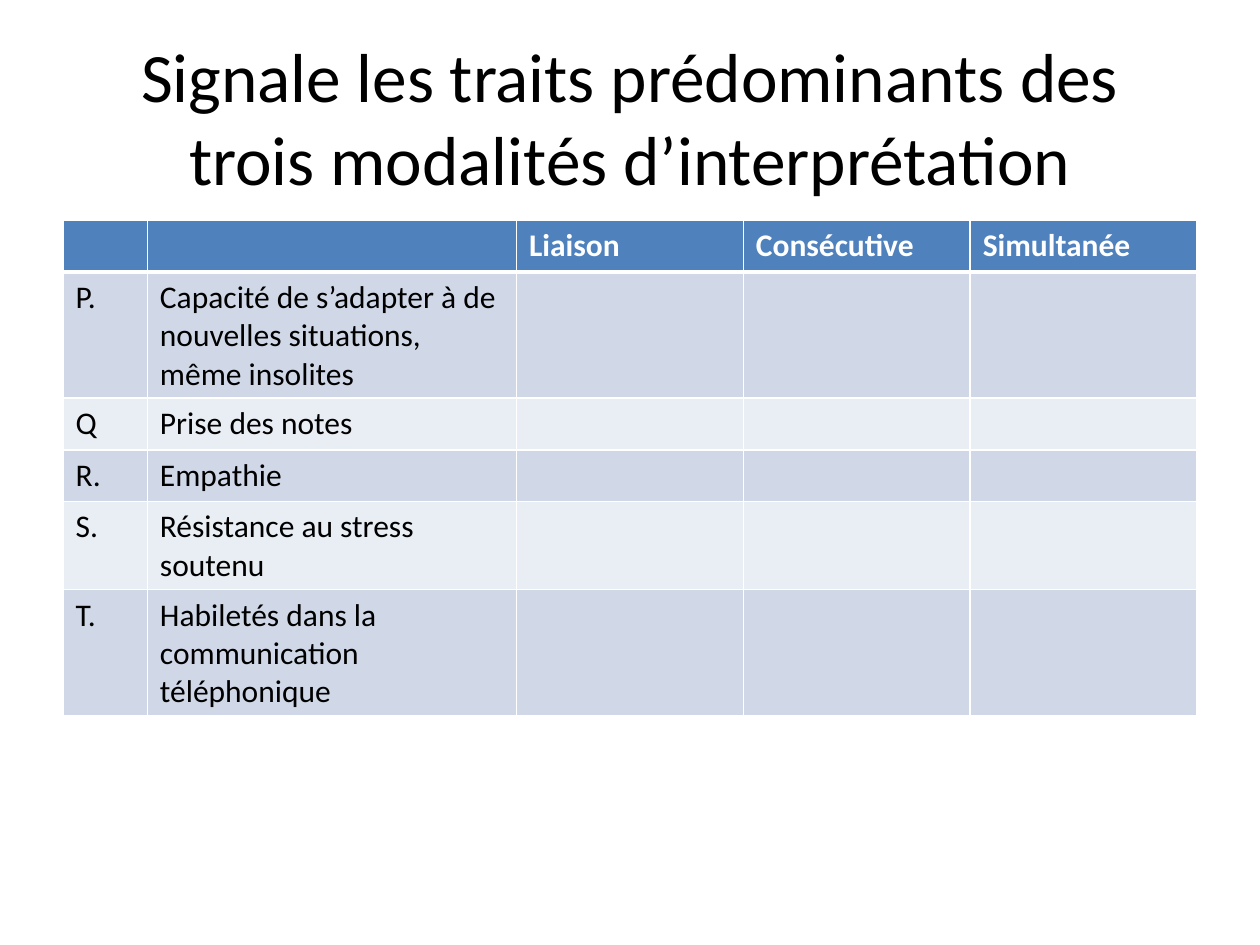
from dataclasses import dataclass

from lxml.etree import SubElement
from pptx import Presentation
from pptx.dml.color import RGBColor
from pptx.enum.text import MSO_ANCHOR, PP_ALIGN
from pptx.oxml.ns import qn
from pptx.util import Inches, Pt


@dataclass(frozen=True)
class Theme:
    font: str = "Calibri"
    title_size: float = 39.6
    table_size: float = 18
    text: str = "000000"
    header_text: str = "FFFFFF"
    header_fill: str = "4F81BD"
    band_fills: tuple = ("D0D8E8", "E9EDF4")
    border: str = "FFFFFF"


THEME = Theme()

COLUMN_WIDTHS = [0.67, 2.93, 1.8, 1.8, 1.8]
ROW_HEIGHT = 0.41
ROWS = [
    ["", "", "Liaison", "Consécutive", "Simultanée"],
    ["P.", "Capacité de s’adapter à de nouvelles situations, même insolites"],
    ["Q", "Prise des notes"],
    ["R.", "Empathie"],
    ["S.", "Résistance au stress soutenu"],
    ["T.", "Habiletés dans la communication téléphonique"],
]


def write_text(paragraph, text, color, **font_values):
    run = paragraph.add_run()
    run.text = text
    run.font.color.rgb = RGBColor.from_string(color)
    for name, value in {"name": THEME.font, **font_values}.items():
        setattr(run.font, name, value)


def add_borders(cell, bottom_width):
    """Draw all four cell edges; must run before the cell's fill is set."""
    properties = cell._tc.get_or_add_tcPr()
    widths = {"a:lnL": 1, "a:lnR": 1, "a:lnT": 1, "a:lnB": bottom_width}
    for tag, width in widths.items():
        line = SubElement(properties, qn(tag), w=str(Pt(width)))
        solid_fill = SubElement(line, qn("a:solidFill"))
        SubElement(solid_fill, qn("a:srgbClr"), val=THEME.border)


presentation = Presentation()
presentation.slide_width = Inches(10)
presentation.slide_height = Inches(7.5)
slide = presentation.slides.add_slide(presentation.slide_layouts[6])

# Title
title = slide.shapes.add_textbox(Inches(0.5), Inches(0.3), Inches(9), Inches(1.25))
title_frame = title.text_frame
title_format = {"word_wrap": True, "vertical_anchor": MSO_ANCHOR.MIDDLE}
for name, value in title_format.items():
    setattr(title_frame, name, value)
title_paragraph = title_frame.paragraphs[0]
title_paragraph.alignment = PP_ALIGN.CENTER
write_text(
    title_paragraph,
    "Signale les traits prédominants des trois modalités d’interprétation",
    THEME.text,
    size=Pt(THEME.title_size),
)

# Table of traits by kind of interpreting
table = slide.shapes.add_table(
    len(ROWS), len(COLUMN_WIDTHS),
    Inches(0.5), Inches(1.75), Inches(9), Inches(ROW_HEIGHT * len(ROWS)),
).table
for column, width in zip(table.columns, COLUMN_WIDTHS):
    column.width = Inches(width)

for row_index, texts in enumerate(ROWS):
    table.rows[row_index].height = Inches(ROW_HEIGHT)
    is_header = row_index == 0
    fill = THEME.header_fill if is_header else THEME.band_fills[(row_index - 1) % 2]
    color = THEME.header_text if is_header else THEME.text
    for column_index in range(len(COLUMN_WIDTHS)):
        cell = table.cell(row_index, column_index)
        add_borders(cell, bottom_width=3 if is_header else 1)
        cell.fill.solid()
        cell.fill.fore_color.rgb = RGBColor.from_string(fill)
        if column_index < len(texts) and texts[column_index]:
            write_text(
                cell.text_frame.paragraphs[0], texts[column_index], color,
                size=Pt(THEME.table_size), bold=is_header,
            )

presentation.save("out.pptx")
